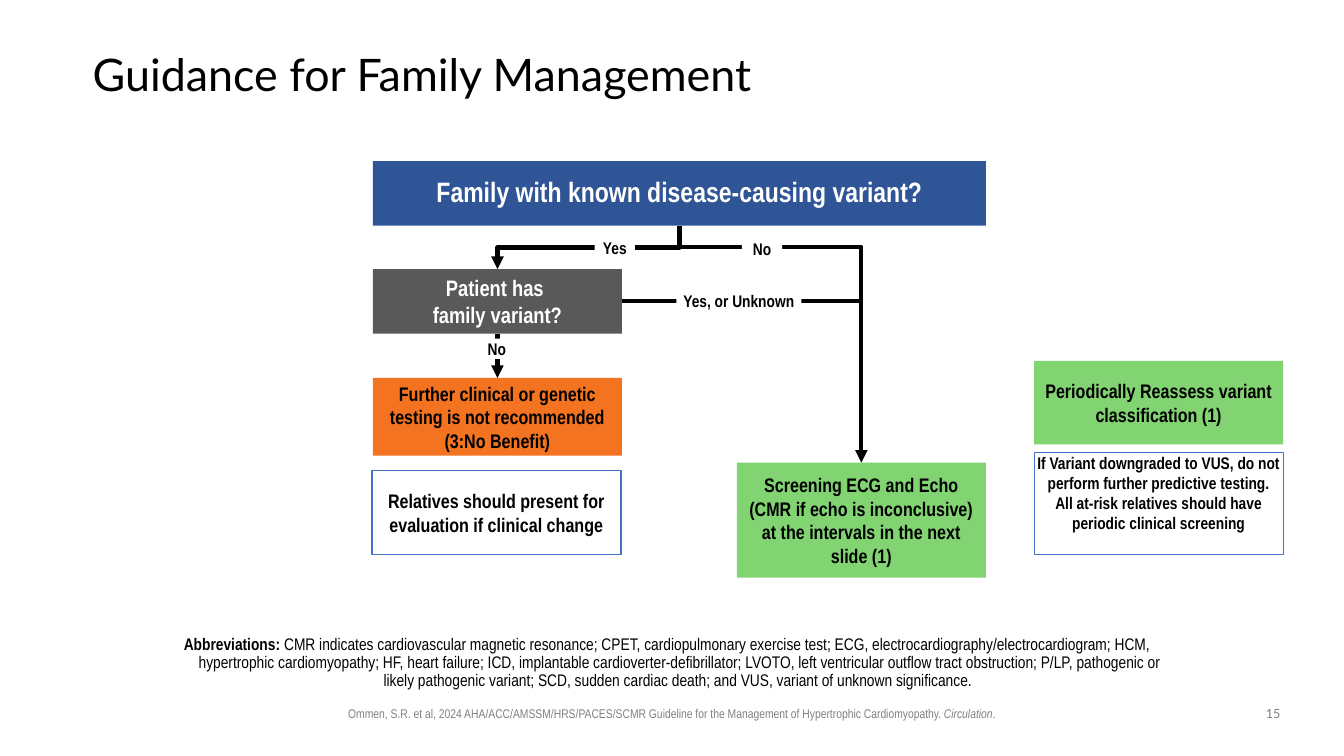
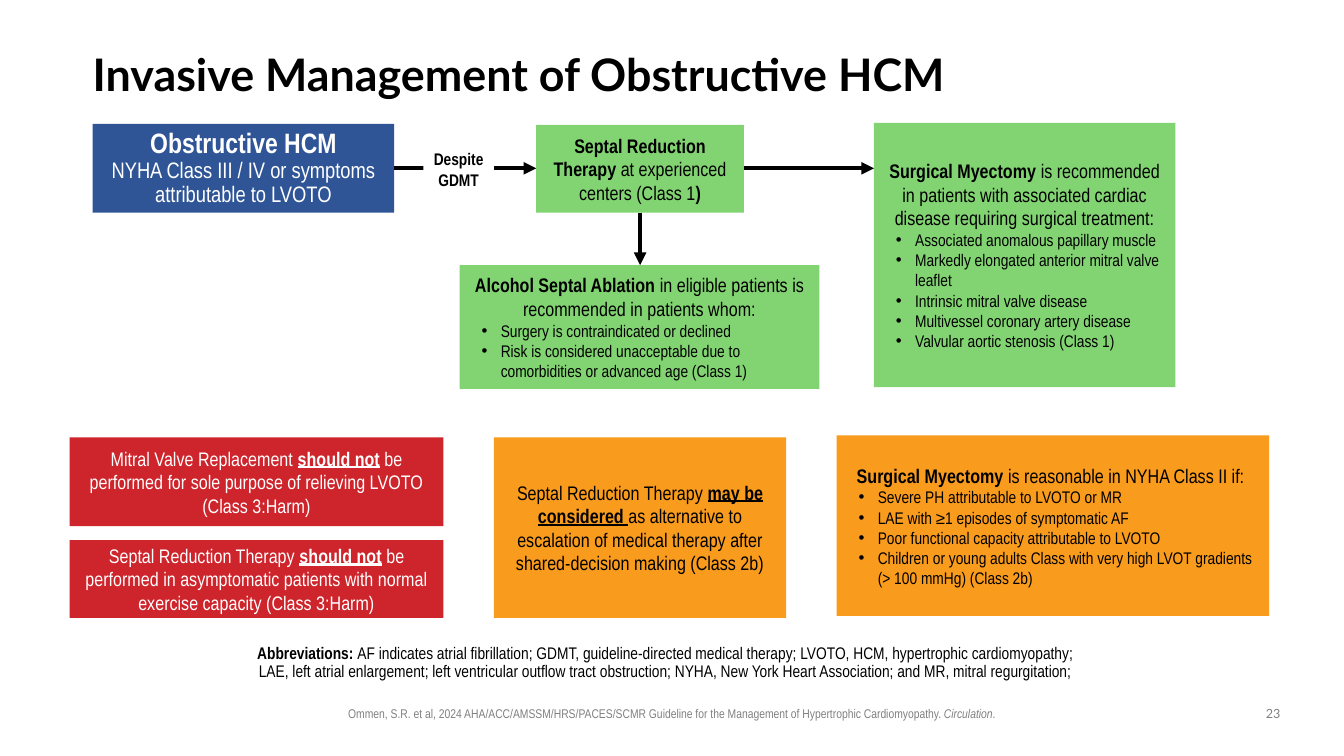
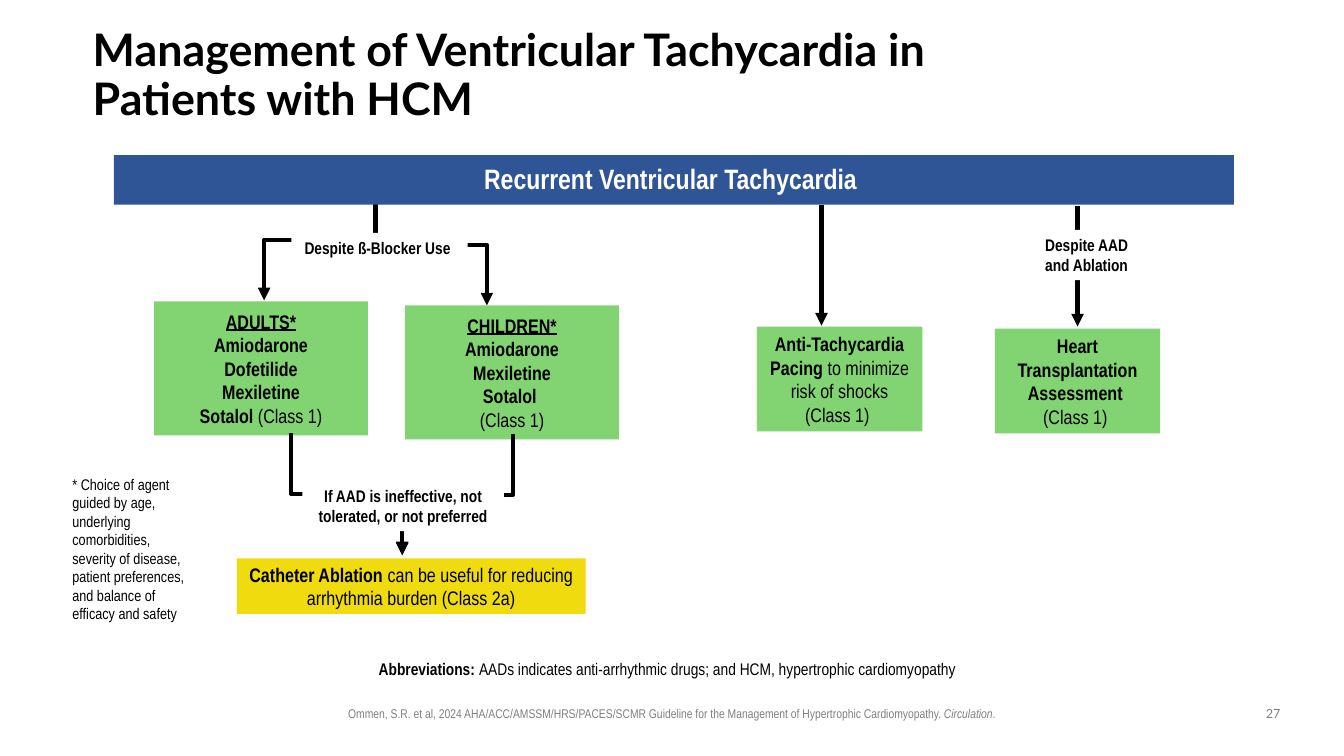
from lxml import etree
from pptx import Presentation
from pptx import util as u
from pptx.dml.color import RGBColor
from pptx.enum import shapes, text
from pptx.oxml import ns

# The grid: ten columns and ten rows to the inch.
COLS, ROWS = 133.33, 75
HUES = {
    "navy": "2F5597", "gray": "595959", "rust": "F47320", "green": "82D472",
    "red": "CE242B", "amber": "F99B1D", "gold": "F0DB0E", "edge": "4472C4",
    "black": "000000", "white": "FFFFFF", "mute": "808080",
}
BODY, HEAD = "Arial Narrow", "Lato"
SIDES = {"l": text.PP_ALIGN.LEFT, "c": text.PP_ALIGN.CENTER}


def grid(*cells):
    return [u.Inches(n / 10) for n in cells]


def hue(name):
    return RGBColor.from_string(HUES[name])


def add_tag(node, tag, **attrs):
    return etree.SubElement(node, ns.qn(tag), attrs)


def write(box, *paras, size=14, bold=False, color="black", font=BODY,
          side="c", lead=None, hang=None, dot=False):
    """Add paragraphs; a run is a string, or a pair of string and b/i/u flags."""
    frame = box.text_frame
    for para in paras:
        p = frame.paragraphs[0]
        if p.runs:
            p = frame.add_paragraph()
        p.alignment = SIDES[side]
        if lead:
            p.line_spacing = lead
        if hang:
            props = p._p.get_or_add_pPr()
            props.set("marL", str(u.Inches(hang[0])))
            props.set("indent", str(u.Inches(-hang[1])))
            if dot:
                add_tag(props, "a:buFont", typeface="Arial")
                add_tag(props, "a:buChar", char="•")
        for run in [para] if isinstance(para, str) else para:
            words, flags = (run, "b" * bold) if isinstance(run, str) else run
            r = p.add_run()
            r.text = words
            r.font.name, r.font.size = font, u.Pt(size)
            r.font.color.rgb = hue(color)
            r.font.bold, r.font.italic = "b" in flags, "i" in flags
            r.font.underline = "u" in flags


def points(box, *items):
    write(box, *items, size=12, side="l", hang=(0.31, 0.19), dot=True)


def fit(box, pad, mid):
    frame = box.text_frame
    frame.word_wrap = True
    frame.vertical_anchor = text.MSO_ANCHOR.MIDDLE if mid else text.MSO_ANCHOR.TOP
    left, top, right, low = [u.Inches(n) for n in pad]
    frame.margin_left, frame.margin_top = left, top
    frame.margin_right, frame.margin_bottom = right, low
    return box


WIDE, NONE = (0.1, 0.05, 0.1, 0.05), (0, 0, 0, 0)


def note(slide, at, *paras, pad=WIDE, mid=False, **form):
    box = fit(slide.shapes.add_textbox(*grid(*at)), pad, mid)
    write(box, *paras, **form)


def block(slide, at, fill, *paras, pad=WIDE, mid=True, edge=0, **form):
    box = fit(slide.shapes.add_shape(shapes.MSO_SHAPE.RECTANGLE, *grid(*at)), pad, mid)
    box.shadow.inherit = False
    box.fill.solid()
    box.fill.fore_color.rgb = hue(fill)
    if edge:
        box.line.color.rgb, box.line.width = hue("edge"), u.Pt(edge)
    else:
        box.line.fill.background()
    write(box, *paras, **form)
    return box


def banner(slide, at, title):
    return block(slide, at, "navy", title, pad=NONE, size=20, bold=True,
                 color="white", lead=0.9)


def label(slide, at, words, pad=NONE):
    block(slide, at, "white", words, pad=pad, mid=False, size=12, bold=True)


def link(slide, start, end, kind=shapes.MSO_CONNECTOR.STRAIGHT, head=True):
    line = slide.shapes.add_connector(kind, *grid(*start, *end))
    line.line.color.rgb, line.line.width = hue("black"), u.Pt(3)
    props = line._element.spPr
    if head:
        add_tag(props.find(ns.qn("a:ln")), "a:tailEnd", type="triangle")
    add_tag(props, "a:effectLst")
    return line


def elbow(slide, start, end, bend=0.5):
    """Arrow that leaves downward, turns sideways at bend, and ends downward."""
    (x, y), (far, low) = start, end
    wide, tall = abs(far - x), low - y
    left, top = (x + far - tall) / 2, (y + low - wide) / 2
    line = link(slide, (left, top), (left + tall, top + wide),
                shapes.MSO_CONNECTOR.ELBOW)
    props = line._element.spPr
    frame = props.find(ns.qn("a:xfrm"))
    frame.set("rot", str((270 if far > x else 90) * 60000))
    if far > x:
        frame.set("flipH", "1")
    geom = props.find(ns.qn("a:prstGeom"))
    guides = geom.find(ns.qn("a:avLst"))
    if guides is None:
        guides = add_tag(geom, "a:avLst")
    add_tag(guides, "a:gd", name="adj1", fmla=f"val {round(bend * 100000)}")


def begin(deck, title, page, wide, bold=True):
    """New slide with the title, citation and page number all slides share."""
    slide = deck.slides.add_slide(deck.slide_layouts[6])
    note(slide, (9.2, 4, wide, 7.2), title, pad=NONE, mid=True, size=32,
         bold=bold, font=HEAD, side="l", lead=0.9)
    note(slide, (29.4, 69.5, 74.5, 2.5),
         ["Ommen, S.R. et al, 2024 AHA/ACC/AMSSM/HRS/PACES/SCMR Guideline for the "
          "Management of Hypertrophic Cardiomyopathy. ", ("Circulation", "i"), "."],
         size=9, color="mute")
    note(slide, (124.2, 69.5, 4.2, 2.6), str(page), size=9, font=HEAD, color="mute")
    return slide


def gloss(slide, at, first, *more, hang=None):
    note(slide, at, [("Abbreviations: ", "b"), first], *more,
         pad=(0, 0.05, 0.1, 0.05), size=12, lead=0.9, hang=hang)


def family(deck):
    s = begin(deck, "Guidance for Family Management", 15, 106.3, bold=False)
    gloss(s, (16, 62.6, 101.4, 4.2),
          "CMR indicates cardiovascular magnetic resonance; CPET, cardiopulmonary "
          "exercise test; ECG, electrocardiography/electrocardiogram; HCM, "
          "hypertrophic cardiomyopathy; HF, heart failure; ICD, implantable "
          "cardioverter-defibrillator; LVOTO, left ventricular outflow tract "
          "obstruction; P/LP, pathogenic or likely pathogenic variant; SCD, sudden "
          "cardiac death; and VUS, variant of unknown significance. ",
          hang=(0.25, 0.25))
    left, mid, right, wide = 37, 73.1, 102.6, 24.7
    banner(s, (left, 16, 60.8, 6.4), "Family with known disease-causing variant?")
    block(s, (left, 26.7, wide, 6.4), "gray", "Patient has ", "family variant?",
          size=16, bold=True, color="white")
    for x, y, tall, fill, edge, words in (
        (left, 37.5, 7.7, "rust", 0,
         "Further clinical or genetic testing is not recommended (3:No Benefit)"),
        (left - 0.1, 46.7, 8.3, "white", 1,
         "Relatives should present for evaluation if clinical change"),
        (mid, 45.9, 11.4, "green", 0,
         "Screening ECG and Echo (CMR if echo is inconclusive) at the intervals "
         "in the next slide (1)"),
        (right, 35.8, 8.3, "green", 0,
         "Periodically Reassess variant classification (1)"),
    ):
        block(s, (x, y, wide, tall), fill, words, edge=edge, bold=True)
    block(s, (right, 44.9, wide, 10.1), "white",
          "If Variant downgraded to VUS, do not perform further predictive testing.",
          "All at-risk relatives should have periodic clinical screening",
          pad=NONE, mid=False, edge=0.75, size=12, bold=True)

    fork, yes, no = (67.4, 22.4), left + wide / 2, mid + wide / 2
    elbow(s, fork, (yes, 26.7))
    elbow(s, fork, (no, 45.9), bend=0.09)
    link(s, (yes, 33.1), (yes, 37.5))
    link(s, (left + wide, 29.9), (no, 29.9), head=False)
    for x, y, w, words in ((59, 23.6, 4, "Yes"), (73.6, 23.7, 4, "No"),
                           (47.3, 33.6, 4, "No"), (67.1, 28.8, 12.4, "Yes, or Unknown")):
        label(s, (x, y, w, 2), words)


def invasive(deck):
    s = begin(deck, "Invasive Management of Obstructive HCM", 23, 115)
    gloss(s, (17.3, 63.5, 98.8, 4),
          "AF indicates atrial fibrillation; GDMT, guideline-directed medical "
          "therapy; LVOTO, HCM, hypertrophic cardiomyopathy; ",
          "LAE, left atrial enlargement; left ventricular outflow tract obstruction; "
          "NYHA, New York Heart Association; and MR, mitral regurgitation; ")
    start = banner(s, (9.2, 12.3, 29.9, 8.8), "Obstructive HCM")
    write(start, "NYHA Class III / IV or symptoms attributable to LVOTO",
          size=16, color="white", lead=0.9)
    block(s, (53.2, 12.4, 20.6, 8.7), "green",
          [("Septal Reduction Therapy ", "b"), "at experienced centers (Class 1", (")", "b")])
    for at, fill, lead, rest, items in (
        ((45.6, 26.3, 35.7, 12.3), "green", "Alcohol Septal Ablation ",
         "in eligible patients is recommended in patients whom:",
         ("Surgery is contraindicated or declined",
          "Risk is considered unacceptable due to comorbidities or advanced age (Class 1)")),
        ((86.7, 12.2, 29.9, 26.2), "green", "Surgical Myectomy ",
         "is recommended in patients with associated cardiac disease requiring "
         "surgical treatment:",
         ("Associated anomalous papillary muscle",
          "Markedly elongated anterior mitral valve leaflet",
          "Intrinsic mitral valve disease",
          "Multivessel coronary artery disease",
          "Valvular aortic stenosis (Class 1)")),
        ((83, 43.2, 42.9, 17.9), "amber", "Surgical Myectomy ",
         "is reasonable in NYHA Class II if: ",
         ("Severe PH attributable to LVOTO or MR",
          "LAE with ≥1 episodes of symptomatic AF",
          "Poor functional capacity attributable to LVOTO",
          "Children or young adults Class with very high LVOT gradients "
          "(> 100 mmHg) (Class 2b)")),
    ):
        points(block(s, at, fill, [(lead, "b"), rest]), *items)
    for at, fill, color, lead, stress, rest in (
        ((6.9, 43.4, 37.1, 8.8), "red", "white", "Mitral Valve Replacement ", "should not",
         " be performed for sole purpose of relieving LVOTO (Class 3:Harm)"),
        ((6.9, 53.6, 37.1, 7.7), "red", "white", "Septal Reduction Therapy ", "should not",
         " be performed in asymptomatic patients with normal exercise capacity "
         "(Class 3:Harm)"),
        ((49, 43.4, 29, 17.9), "amber", "black", "Septal Reduction Therapy ",
         "may be considered ",
         "as alternative to escalation of medical therapy after shared-decision "
         "making (Class 2b)"),
    ):
        block(s, at, fill, [lead, (stress, "bu"), rest], color=color)

    link(s, (39.1, 16.7), (53.2, 16.7))
    link(s, (73.8, 16.7), (86.7, 16.7))
    link(s, (63.5, 21.1), (63.5, 26.3))
    label(s, (42, 14.8, 7, 4), "Despite GDMT")


def rhythm(deck):
    s = begin(deck, "Management of Ventricular Tachycardia in Patients with HCM", 27, 96.9)
    gloss(s, (17.3, 65.1, 98.8, 2.4),
          "AADs indicates anti-arrhythmic drugs; and HCM, hypertrophic cardiomyopathy")
    note(s, (6.2, 46.6, 14.3, 15.8),
         "* Choice of agent guided by age, underlying comorbidities, severity of "
         "disease, patient preferences, and balance of efficacy and safety",
         size=11, side="l")
    for x, y, group, drugs in (
        (15.3, 29.9, "ADULTS*", ("Amiodarone", "Dofetilide", "Mexiletine",
                                 ["Sotalol ", ("(Class 1)", "")])),
        (40.2, 30.3, "CHILDREN*", ("Amiodarone", "Mexiletine", "Sotalol ",
                                   [("(Class 1)", "")])),
    ):
        block(s, (x, y, 21.2, 13.3), "green", [(group, "bu")], *drugs, bold=True)
    block(s, (75.1, 32.4, 16.4, 10.4), "green",
          [("Anti-Tachycardia Pacing ", "b"), "to minimize risk of shocks (Class 1) "])
    block(s, (98.7, 32.6, 16.4, 10.4), "green",
          [("Heart Transplantation Assessment ", "b")], "(Class 1) ")
    block(s, (23.5, 55.4, 34.6, 5.5), "gold",
          [("Catheter Ablation ", "b"), "can be useful for reducing arrhythmia burden (Class 2a)"])

    for x, y, step in ((37.3, 18.3, 11), (37.2, 17.8, -11),
                       (28.9, 43, 11), (50.9, 43.1, -11)):
        elbow(s, (x, y), (x + step, y + 12))
    for x, y in ((81.5, 20.3), (106.9, 20.4)):
        link(s, (x, y), (x, y + 12))
    for at, words in (
        ((30, 47.7, 20, 5), "If AAD is ineffective, not tolerated, or not preferred"),
        ((102.3, 22.8, 11, 5), "Despite AAD and Ablation"),
        ((28.9, 23.1, 17.5, 3), "Despite ß-Blocker Use "),
    ):
        label(s, at, words, pad=WIDE)
    banner(s, (11.3, 15.4, 111.1, 4.9), "Recurrent Ventricular Tachycardia ")


def main():
    deck = Presentation()
    deck.slide_width, deck.slide_height = grid(COLS, ROWS)
    for build in (family, invasive, rhythm):
        build(deck)
    deck.save("out.pptx")


if __name__ == "__main__":
    main()
